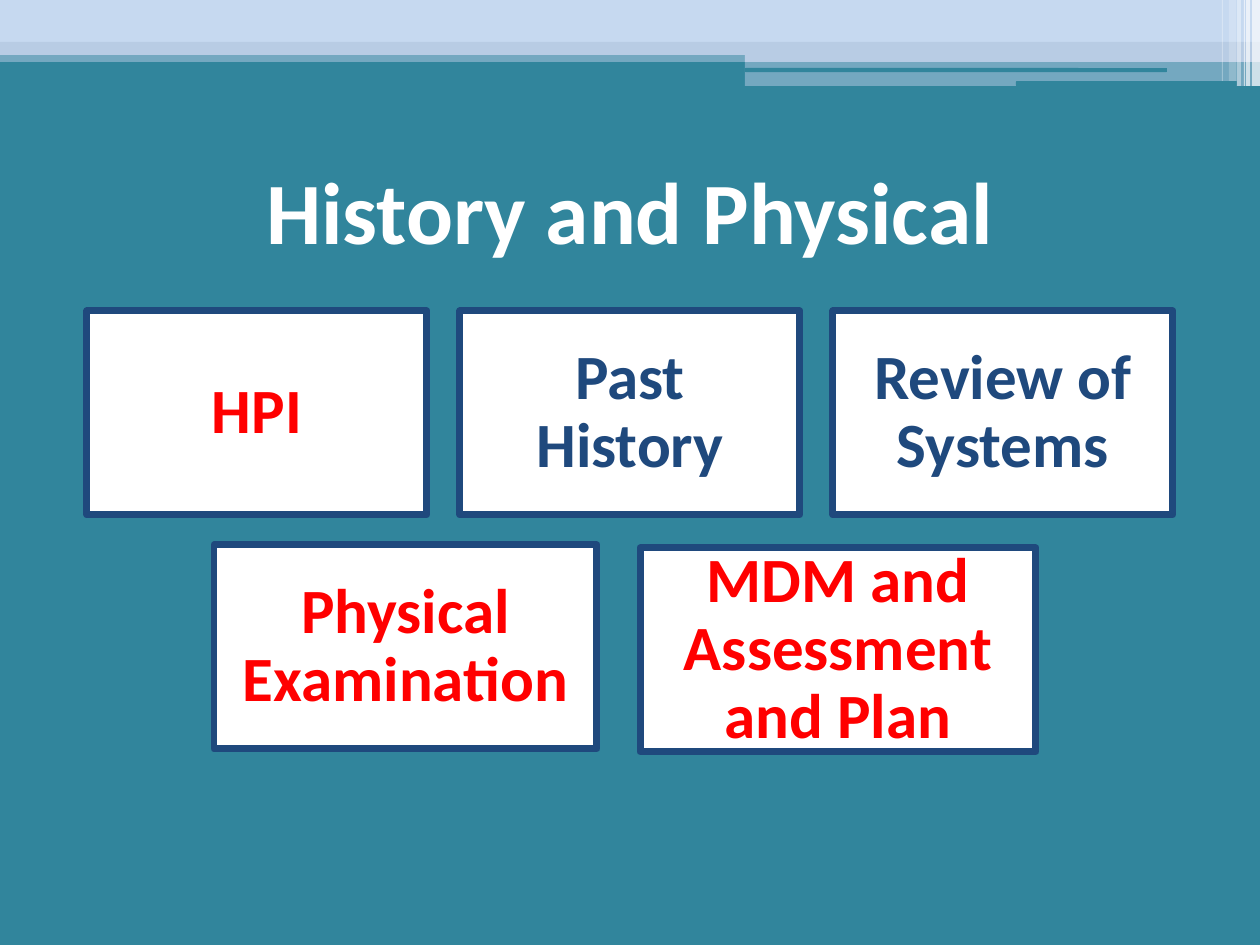
import pptx
import pptx.util
import pptx.dml.color
import pptx.enum.shapes
import pptx.enum.text
import pptx.oxml.ns
from lxml import etree

PX = 914400 / 126
COLORS = {"teal": "31859C", "sky": "C6D9F0", "haze": "B8CCE4",
          "white": "FFFFFF", "navy": "1F497D", "red": "FF0000"}
FRAME = {"word_wrap": True, "vertical_anchor": pptx.enum.text.MSO_ANCHOR.MIDDLE}
FONT = {"name": "Calibri", "bold": True}
RECT = pptx.enum.shapes.MSO_SHAPE.RECTANGLE
ROUNDED = pptx.enum.shapes.MSO_SHAPE.ROUNDED_RECTANGLE


def emu(px):
    return pptx.util.Emu(round(px * PX))


def rgb(color):
    return pptx.dml.color.RGBColor.from_string(COLORS[color])


def apply(obj, values):
    for key, value in values.items():
        setattr(obj, key, value)


class Deck:
    """Holds the slide style and draws each kind of element on the current slide."""

    def __init__(self, width, height, background):
        self.prs = pptx.Presentation()
        apply(self.prs, {"slide_width": emu(width), "slide_height": emu(height)})
        self.s = self.prs.slides.add_slide(self.prs.slide_layouts[5])
        fill = self.s.background.fill
        fill.solid()
        fill.fore_color.rgb = rgb(background)

    def label(self, tf, text, size, color, spacing=1.0):
        apply(tf, FRAME)
        tf.text = text
        p = tf.paragraphs[0]
        apply(p, {"alignment": pptx.enum.text.PP_ALIGN.CENTER, "line_spacing": spacing})
        r = p.runs[0]
        apply(r.font, {**FONT, "size": pptx.util.Pt(size)})
        r.font.color.rgb = rgb(color)

    def title(self, box, text):
        sp = self.s.shapes.title
        apply(sp, dict(zip(("left", "top", "width", "height"), map(emu, box))))
        self.label(sp.text_frame, text, 50, "white")

    def block(self, box, color, alpha=100, kind=RECT):
        sp = self.s.shapes.add_shape(kind, *map(emu, box))
        sp.shadow.inherit = False
        sp.fill.solid()
        sp.fill.fore_color.rgb = rgb(color)
        sp.line.fill.background()
        if kind == ROUNDED:
            sp.adjustments[0] = 0.17
        if alpha < 100:
            qn = pptx.oxml.ns.qn
            clr = next(sp.fill._xPr.iter(qn("a:srgbClr")))
            etree.SubElement(clr, qn("a:alpha")).set("val", str(alpha * 1000))
        return sp

    def card(self, box, text, color):
        sp = self.block(box, "white")
        sp.line.color.rgb = rgb("navy")
        sp.line.width = pptx.util.Pt(4)
        tf = sp.text_frame
        sides = ("left", "top", "right", "bottom")
        apply(tf, {f"margin_{side}": emu(19) for side in sides})
        self.label(tf, text, 36, color, 0.9)


def main():
    deck = Deck(1260, 945, "teal")

    bands = [((0, 50, 1260, 12), "haze", 50), ((0, 0, 1260, 43), "sky", 100),
             ((0, 42, 1260, 13), "haze", 100), ((745, 49, 515, 13), "haze", 100),
             ((745, 61, 515, 25), "haze", 50)]
    for box, color, alpha in bands:
        deck.block(box, color, alpha)

    for box in ((745, 68, 422, 4), (1016, 81, 221, 5)):
        deck.block(box, "teal", kind=ROUNDED)

    stripes = [(1252, 8, 86, 65), (1246, 4, 86, 65), (1244, 1, 86, 60),
               (1237, 4, 86, 40), (1229, 7, 81, 20), (1222, 1, 81, 30)]
    for left, width, height, alpha in stripes:
        deck.block((left, 0, width, height), "white", alpha)

    deck.title((63, 136, 1134, 147), "History and Physical")

    top_row = [("HPI", "red"), ("Past History", "navy"), ("Review of Systems", "navy")]
    for i, (text, color) in enumerate(top_row):
        deck.card((87 + 373 * i, 311, 340, 204), text, color)
    deck.card((214, 545, 383, 204), "Physical Examination", "red")
    deck.card((640, 548, 396, 204), "MDM and Assessment and Plan", "red")

    deck.prs.save("out.pptx")


if __name__ == "__main__":
    main()
